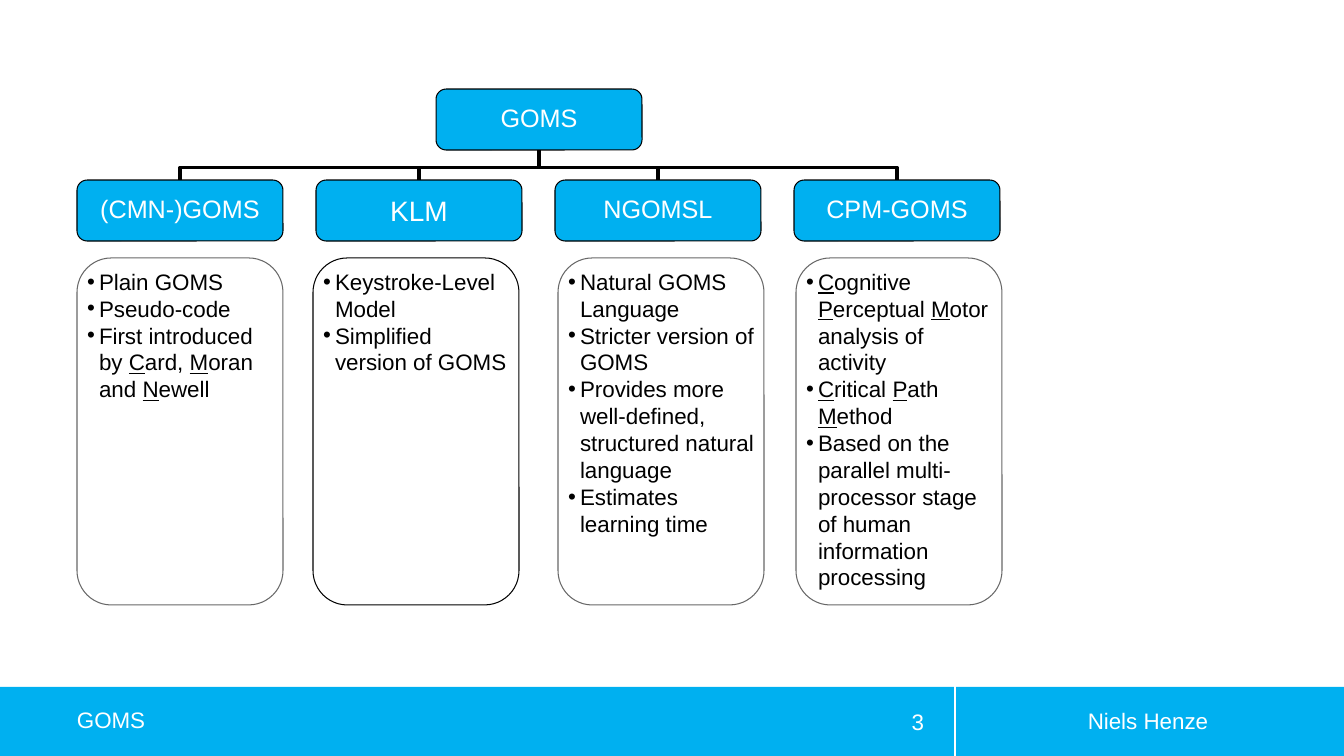
from lxml import etree
from pptx import Presentation
from pptx import util as u
from pptx.dml.color import RGBColor
from pptx.enum import shapes, text
from pptx.oxml.ns import qn

PX = 914400 / 100.8
COLORS = {"blue": "00B0F0", "white": "FFFFFF", "black": "000000", "grey": "676767"}
FONT = "Arial"

BOX_W, BOX_H = 206, 61
ROOT_LEFT, ROOT_TOP = 436, 89
COLUMN_LEFT, COLUMN_PITCH, VARIANT_TOP = 77, 239, 180
NOTE_TOP, NOTE_H = 258, 347
FOOTER_TOP, FOOTER_H = 687, 69

# Heading, heading size, heading line spacing, note left, note outline, notes.
# Letters between underscores are underlined.
VARIANTS = [
    ("(CMN-)GOMS", 18, 0.9, 77, "grey",
     ["Plain GOMS", "Pseudo-code",
      "First introduced by _C_ard, _M_oran and _N_ewell"]),
    ("KLM", 20, 1.0, 313, "black",
     ["Keystroke-Level Model", "Simplified version of GOMS"]),
    ("NGOMSL", 18, 0.9, 558, "grey",
     ["Natural GOMS Language", "Stricter version of GOMS",
      "Provides more well-defined, structured natural language",
      "Estimates learning time"]),
    ("CPM-GOMS", 18, 0.9, 796, "grey",
     ["_C_ognitive _P_erceptual _M_otor analysis of activity",
      "_C_ritical _P_ath _M_ethod",
      "Based on the parallel multi-processor stage of human information processing"]),
]


def px(length):
    return u.Emu(round(length * PX))


def rgb(name):
    return RGBColor.from_string(COLORS[name])


def style_font(font, size, color):
    font.name, font.size = FONT, u.Pt(size)
    font.color.rgb = rgb(color)


def clear_margins(frame):
    frame.margin_left = frame.margin_top = frame.margin_right = frame.margin_bottom = 0


def add_block(slide, kind, left, top, width, height, fill, outline=None):
    block = slide.shapes.add_shape(kind, px(left), px(top), px(width), px(height))
    block.shadow.inherit = False
    block.fill.solid()
    block.fill.fore_color.rgb = rgb(fill)
    if outline:
        block.line.color.rgb = rgb(outline)
        block.line.width = u.Pt(0.75)
    else:
        block.line.fill.background()
    return block


def add_heading(slide, label, left, top, size=18, spacing=0.9):
    heading = add_block(slide, shapes.MSO_SHAPE.ROUNDED_RECTANGLE,
                        left, top, BOX_W, BOX_H, "blue", "black")
    frame = heading.text_frame
    clear_margins(frame)
    frame.word_wrap = False
    frame.vertical_anchor = text.MSO_ANCHOR.MIDDLE
    frame.text = label
    line = frame.paragraphs[0]
    line.alignment = text.PP_ALIGN.CENTER
    line.line_spacing = spacing
    style_font(line.runs[0].font, size, "white")


def add_bullet(paragraph):
    props = paragraph._p.get_or_add_pPr()
    props.set("marL", str(px(12)))
    props.set("indent", str(-px(12)))
    etree.SubElement(props, qn("a:buFont"), typeface=FONT)
    etree.SubElement(props, qn("a:buChar"), char="•")


def add_notes(slide, notes, left, outline):
    card = add_block(slide, shapes.MSO_SHAPE.ROUNDED_RECTANGLE,
                     left, NOTE_TOP, BOX_W, NOTE_H, "white", outline)
    frame = card.text_frame
    clear_margins(frame)
    frame.word_wrap = True
    frame.vertical_anchor = text.MSO_ANCHOR.TOP
    for index, note in enumerate(notes):
        paragraph = frame.add_paragraph() if index else frame.paragraphs[0]
        paragraph.alignment = text.PP_ALIGN.LEFT
        add_bullet(paragraph)
        for part, words in enumerate(note.split("_")):
            if words:
                run = paragraph.add_run()
                run.text = words
                style_font(run.font, 16, "black")
                run.font.underline = part % 2 == 1


def add_branch(slide, variant_left):
    """Elbow from a variant's top up to the root's bottom, as a quarter-turned connector."""
    root_x, variant_x = ROOT_LEFT + BOX_W / 2, variant_left + BOX_W / 2
    root_y = ROOT_TOP + BOX_H
    mid_x, mid_y = (root_x + variant_x) / 2, (root_y + VARIANT_TOP) / 2
    half_span = abs(root_x - variant_x) / 2
    on_right = variant_x > root_x
    half_drop = (VARIANT_TOP - root_y) / 2 * (1 if on_right else -1)
    branch = slide.shapes.add_connector(
        shapes.MSO_CONNECTOR.ELBOW,
        px(mid_x + half_drop), px(mid_y - half_span),
        px(mid_x - half_drop), px(mid_y + half_span))
    branch.line.color.rgb = rgb("black")
    branch.line.width = u.Pt(2.25)
    props = branch._element.spPr
    props.find(qn("a:xfrm")).set("rot", str((90 if on_right else 270) * 60000))
    adjustments = props.find(qn("a:prstGeom")).find(qn("a:avLst"))
    etree.SubElement(adjustments, qn("a:gd"), name="adj1", fmla="val 41900")
    etree.SubElement(props, qn("a:effectLst"))


def add_footer_text(slide, words, left, top, width, align):
    box = slide.shapes.add_textbox(px(left), px(top), px(width), px(40))
    frame = box.text_frame
    frame.word_wrap = True
    frame.vertical_anchor = text.MSO_ANCHOR.MIDDLE
    frame.text = words
    frame.paragraphs[0].alignment = align
    style_font(frame.paragraphs[0].runs[0].font, 16, "white")
    return frame


def add_footer(slide):
    for left, width in ((956, 388), (0, 954)):
        add_block(slide, shapes.MSO_SHAPE.RECTANGLE,
                  left, FOOTER_TOP, width, FOOTER_H, "blue")
    add_footer_text(slide, "Niels Henze", 969, 701, 358, text.PP_ALIGN.CENTER)
    add_footer_text(slide, "3", 848, 702, 86, text.PP_ALIGN.RIGHT)
    topic = add_footer_text(slide, "GOMS", 77, 701, 619, text.PP_ALIGN.LEFT)
    clear_margins(topic)
    topic.paragraphs[0].line_spacing = 0.9


def main():
    deck = Presentation()
    deck.slide_width, deck.slide_height = px(1344), px(756)
    slide = deck.slides.add_slide(deck.slide_layouts[6])
    add_footer(slide)
    lefts = [COLUMN_LEFT + COLUMN_PITCH * i for i in range(len(VARIANTS))]
    for left in reversed(lefts):
        add_branch(slide, left)
    add_heading(slide, "GOMS", ROOT_LEFT, ROOT_TOP)
    for left, (label, size, spacing, *_) in zip(lefts, VARIANTS):
        add_heading(slide, label, left, VARIANT_TOP, size, spacing)
    for *_, note_left, outline, notes in VARIANTS:
        add_notes(slide, notes, note_left, outline)
    deck.save("out.pptx")


if __name__ == "__main__":
    main()
